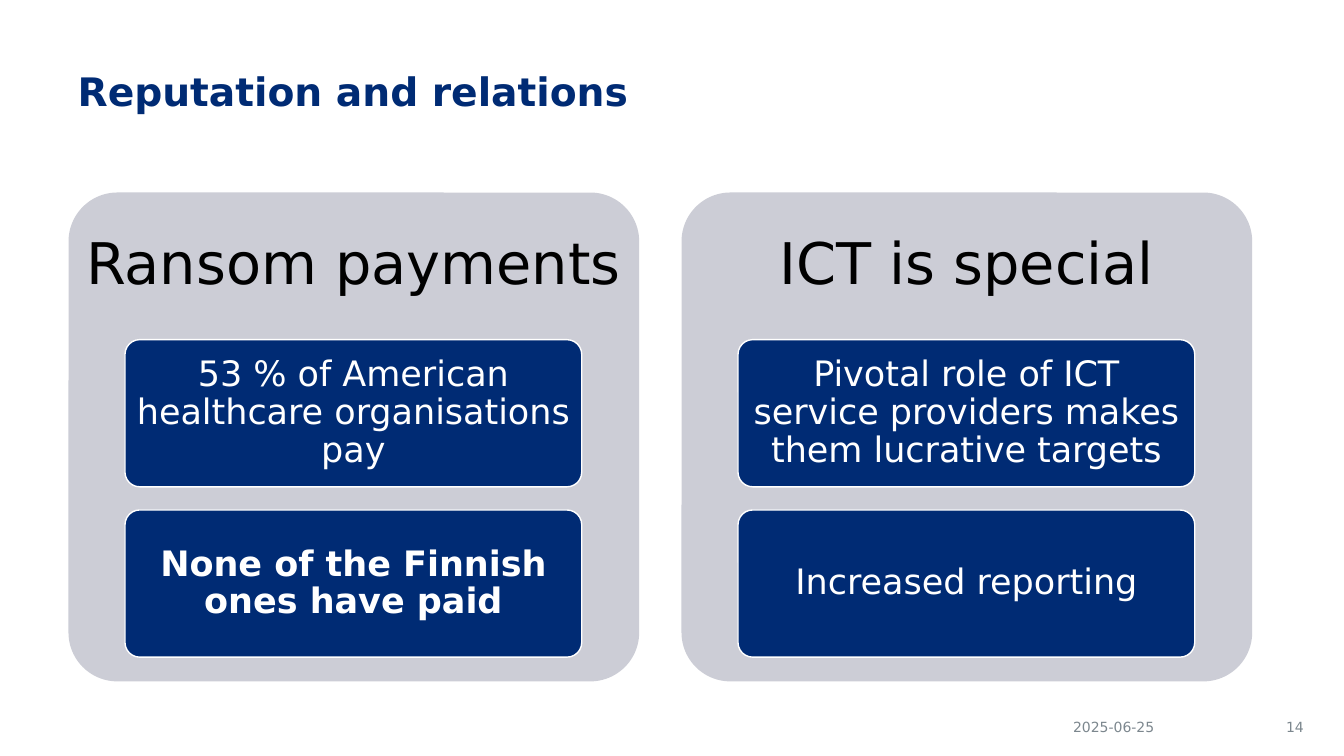
from dataclasses import dataclass

from pptx import Presentation
from pptx.dml.color import RGBColor
from pptx.enum.shapes import MSO_SHAPE
from pptx.enum.text import MSO_ANCHOR, MSO_AUTO_SIZE, PP_ALIGN
from pptx.shapes.autoshape import Shape
from pptx.slide import Slide
from pptx.text.text import TextFrame
from pptx.util import Inches, Pt


@dataclass(frozen=True)
class Theme:
    font: str = "DejaVu Sans"
    navy: str = "002B74"
    panel: str = "CCCDD6"
    white: str = "FFFFFF"
    black: str = "000000"
    grey: str = "7C878E"
    title_size: int = 28
    heading_size: int = 41
    card_size: int = 25
    footer_size: int = 10


@dataclass(frozen=True)
class Card:
    text: str
    bold: bool = False


@dataclass(frozen=True)
class Panel:
    heading: str
    cards: tuple[Card, ...]


@dataclass(frozen=True)
class FooterItem:
    text: str
    left: float
    width: float
    align: PP_ALIGN


THEME = Theme()

PANEL_LEFT, PANEL_TOP, PANEL_W, PANEL_H = 0.68, 1.91, 5.66, 4.85
PANEL_PITCH = 6.08
HEADING_H = 1.46
CARD_INDENT, CARD_W, CARD_H = 0.56, 4.53, 1.46
CARD_PITCH = 1.69

PANELS = (
    Panel("Ransom payments", (
        Card("53 % of American healthcare organisations pay"),
        Card("None of the Finnish ones have paid", bold=True),
    )),
    Panel("ICT is special", (
        Card("Pivotal role of ICT service providers makes them lucrative targets"),
        Card("Increased reporting"),
    )),
)

FOOTER = (
    FooterItem("2025-06-25", 10.02, 2.05, PP_ALIGN.CENTER),
    FooterItem("14", 12.36, 0.67, PP_ALIGN.RIGHT),
)


def write(tf: TextFrame, text: str, size: int, color: str, align: PP_ALIGN,
          bold: bool = False, spacing: float = 0.9,
          anchor: MSO_ANCHOR = MSO_ANCHOR.MIDDLE) -> None:
    tf.word_wrap = True
    tf.auto_size = MSO_AUTO_SIZE.NONE
    tf.vertical_anchor = anchor
    p = tf.paragraphs[0]
    p.alignment = align
    p.line_spacing = spacing
    r = p.add_run()
    r.text = text
    r.font.name = THEME.font
    r.font.size = Pt(size)
    r.font.bold = bold
    r.font.color.rgb = RGBColor.from_string(color)


def set_margins(tf: TextFrame, horizontal: float, vertical: float) -> None:
    tf.margin_left = tf.margin_right = Inches(horizontal)
    tf.margin_top = tf.margin_bottom = Inches(vertical)


def add_round_rect(s: Slide, left: float, top: float, width: float,
                   height: float, fill: str) -> Shape:
    sp = s.shapes.add_shape(MSO_SHAPE.ROUNDED_RECTANGLE, Inches(left),
                            Inches(top), Inches(width), Inches(height))
    sp.adjustments[0] = 0.1
    sp.shadow.inherit = False
    sp.fill.solid()
    sp.fill.fore_color.rgb = RGBColor.from_string(fill)
    sp.line.fill.background()
    return sp


def add_title(s: Slide, text: str) -> None:
    sp = s.shapes.title
    sp.left, sp.top = Inches(0.67), Inches(0.67)
    sp.width, sp.height = Inches(11.75), Inches(1.21)
    write(sp.text_frame, text, THEME.title_size, THEME.navy, PP_ALIGN.LEFT,
          bold=True, anchor=MSO_ANCHOR.TOP)


def add_card(s: Slide, card: Card, left: float, top: float) -> None:
    sp = add_round_rect(s, left, top, CARD_W, CARD_H, THEME.navy)
    sp.line.color.rgb = RGBColor.from_string(THEME.white)
    sp.line.width = Pt(1)
    set_margins(sp.text_frame, 0.07, 0.05)
    write(sp.text_frame, card.text, THEME.card_size, THEME.white,
          PP_ALIGN.CENTER, bold=card.bold)


def add_panel(s: Slide, panel: Panel, left: float) -> None:
    add_round_rect(s, left, PANEL_TOP, PANEL_W, PANEL_H, THEME.panel)
    heading = s.shapes.add_textbox(Inches(left), Inches(PANEL_TOP),
                                   Inches(PANEL_W), Inches(HEADING_H))
    set_margins(heading.text_frame, 0.17, 0.17)
    write(heading.text_frame, panel.heading, THEME.heading_size, THEME.black,
          PP_ALIGN.CENTER)
    for row, card in enumerate(panel.cards):
        add_card(s, card, left + CARD_INDENT,
                 PANEL_TOP + HEADING_H + row * CARD_PITCH)


def add_footer_item(s: Slide, item: FooterItem) -> None:
    box = s.shapes.add_textbox(Inches(item.left), Inches(7.07),
                               Inches(item.width), Inches(0.28))
    write(box.text_frame, item.text, THEME.footer_size, THEME.grey, item.align,
          spacing=1.0)


def main() -> None:
    prs = Presentation()
    prs.slide_width, prs.slide_height = Inches(13.33), Inches(7.5)
    s = prs.slides.add_slide(prs.slide_layouts.get_by_name("Title Only"))
    add_title(s, "Reputation and relations")
    for col, panel in enumerate(PANELS):
        add_panel(s, panel, PANEL_LEFT + col * PANEL_PITCH)
    for item in FOOTER:
        add_footer_item(s, item)
    prs.save("out.pptx")


if __name__ == "__main__":
    main()
